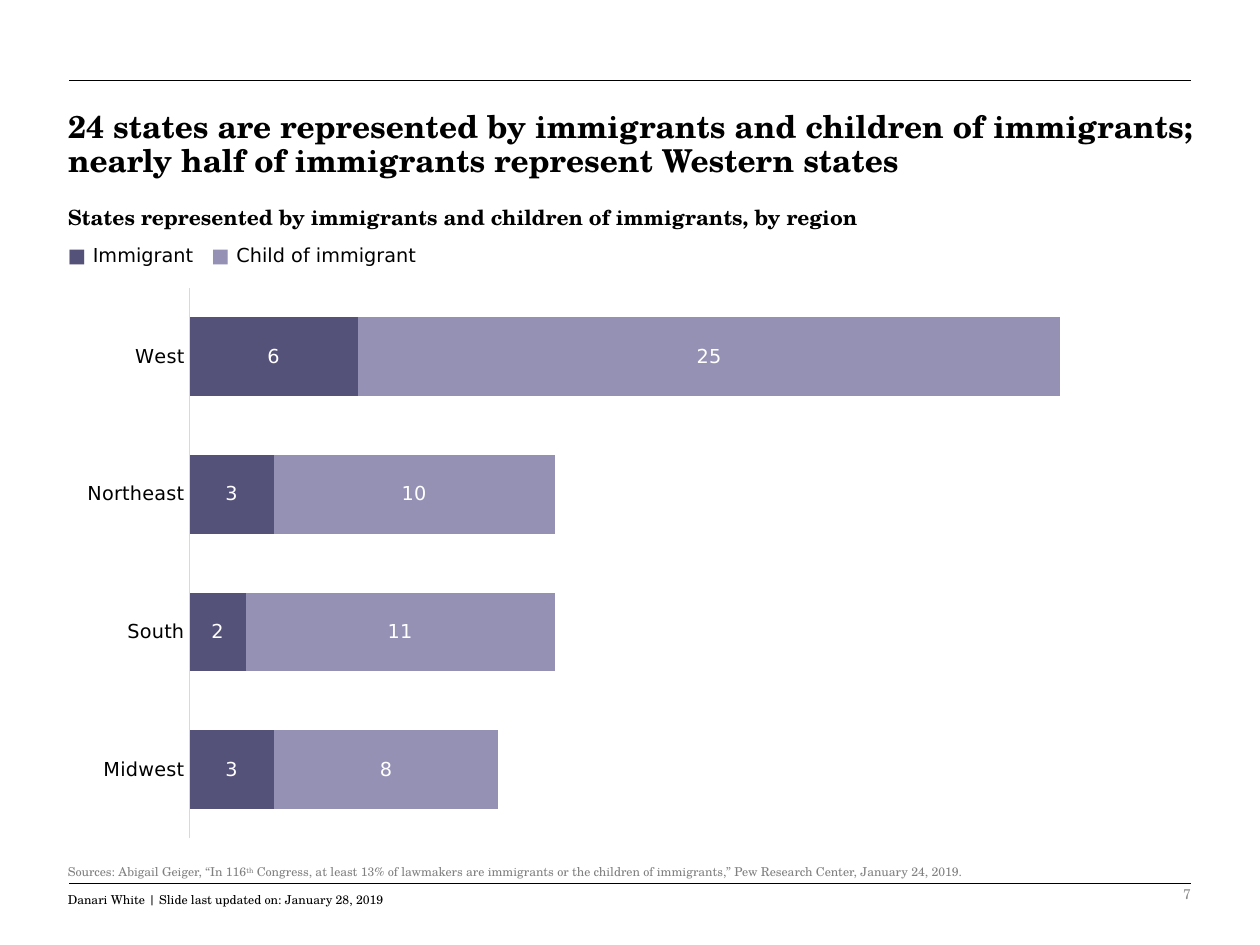
from lxml import etree
from pptx import Presentation
from pptx import util as u
from pptx.chart import data as chart_data
from pptx.dml import color
from pptx.enum import chart as ch, shapes, text
from pptx.oxml import ns

COLUMNS, ROWS = 100, 75
SLIDE_WIDTH, SLIDE_HEIGHT = u.Inches(10), u.Inches(7.5)
SERIF, SANS = "TeX Gyre Schola", "DejaVu Sans"
BLACK, WHITE, SOURCE_GREY, NUMBER_GREY, AXIS_GREY = "000000", "FFFFFF", "808080", "8C8C8C", "D9D9D9"
LEFT, WIDTH = 4.4, 90.2
RULE_LEFT, RULE_RIGHT = 5.5, 94.5

REGIONS = ["West", "Northeast", "South", "Midwest"]
GROUPS = [
    ("Immigrant", [6, 3, 2, 3], "55527A"),
    ("Child of immigrant", [25, 10, 11, 8], "9491B5"),
]
HEADLINE = {"name": SERIF, "size": u.Pt(18), "bold": True}
SUBHEAD = {"name": SERIF, "size": u.Pt(12), "bold": True}
LABEL = {"name": SANS, "size": u.Pt(11), "bold": False}
MARKER = {**LABEL, "bold": True}
FOOTNOTE = {"name": SERIF, "size": u.Pt(7)}
PAGE_NUMBER = {"name": SERIF, "size": u.Pt(8)}


def rgb(value):
    """Return the colour for a hex string."""
    return color.RGBColor.from_string(value)


def grid(box):
    """Turn alternating columns and rows of the slide grid into lengths."""
    cells = (SLIDE_WIDTH / COLUMNS, SLIDE_HEIGHT / ROWS)
    return [u.Emu(round(n * cells[i % 2])) for i, n in enumerate(box)]


def style(font, formats, colour):
    """Apply format values and a colour to a font."""
    for attribute, value in formats.items():
        setattr(font, attribute, value)
    font.color.rgb = rgb(colour)


def add_run(paragraph, words, formats, colour):
    """Append one formatted run to a paragraph."""
    run = paragraph.add_run()
    run.text = words
    style(run.font, formats, colour)
    return run


def add_paragraph_box(slide, box, **formats):
    """Add a wrapping text box and return its first paragraph."""
    frame = slide.shapes.add_textbox(*grid(box)).text_frame
    frame.word_wrap = True
    for attribute, value in formats.items():
        setattr(frame.paragraphs[0], attribute, value)
    return frame.paragraphs[0]


def add_rule(slide, row):
    """Draw a thin rule across the slide at a grid row."""
    rule = slide.shapes.add_connector(
        shapes.MSO_CONNECTOR.STRAIGHT, *grid((RULE_LEFT, row, RULE_RIGHT, row)))
    rule.line.color.rgb = rgb(BLACK)
    rule.line.width = u.Pt(0.5)
    etree.SubElement(rule._element.spPr, ns.qn("a:effectLst"))


def add_headline(slide, box):
    """Place and format the title placeholder."""
    title = slide.shapes.title
    title.left, title.top, title.width, title.height = grid(box)
    frame = title.text_frame
    frame.word_wrap = True
    frame.auto_size = text.MSO_AUTO_SIZE.NONE
    frame.vertical_anchor = text.MSO_ANCHOR.TOP
    paragraph = frame.paragraphs[0]
    paragraph.alignment = text.PP_ALIGN.LEFT
    paragraph.line_spacing = 0.9
    add_run(paragraph, "24 states are represented by immigrants and children of immigrants; "
            "nearly half of immigrants represent Western states", HEADLINE, BLACK)


def add_legend(slide, box):
    """Name the groups beside coloured markers, parted by a tab."""
    paragraph = add_paragraph_box(slide, box)
    tabs = etree.SubElement(paragraph._p.get_or_add_pPr(), ns.qn("a:tabLst"))
    etree.SubElement(tabs, ns.qn("a:tab"), pos=str(u.Inches(1.14)), algn="l")
    for index, (group, _, colour) in enumerate(GROUPS):
        add_run(paragraph, "\t■ " if index else "■ ", MARKER, colour)
        add_run(paragraph, group, LABEL, BLACK)


def fix_plot_area(chart, **shares):
    """Pin the inner plot area to shares of the chart."""
    plot_area = chart._chartSpace.chart.plotArea
    for old in plot_area.findall(ns.qn("c:layout")):
        plot_area.remove(old)
    layout = etree.Element(ns.qn("c:layout"))
    manual = etree.SubElement(layout, ns.qn("c:manualLayout"))
    settings = {"layoutTarget": "inner", "xMode": "edge", "yMode": "edge", **shares}
    for tag, value in settings.items():
        etree.SubElement(manual, ns.qn(f"c:{tag}"), val=str(value))
    plot_area.insert(0, layout)


def add_region_chart(slide, box):
    """Stack the groups in one bar for each region."""
    counts = chart_data.CategoryChartData()
    counts.categories = REGIONS
    for group, values, _ in GROUPS:
        counts.add_series(group, values)
    chart = slide.shapes.add_chart(ch.XL_CHART_TYPE.BAR_STACKED, *grid(box), counts).chart
    chart.has_legend = chart.has_title = False
    style(chart.font, LABEL, WHITE)

    regions = chart.category_axis
    regions.reverse_order = True
    regions.major_tick_mark = regions.minor_tick_mark = ch.XL_TICK_MARK.NONE
    regions.format.line.color.rgb = rgb(AXIS_GREY)
    regions.format.line.width = u.Pt(0.75)
    style(regions.tick_labels.font, LABEL, BLACK)

    scale = chart.value_axis
    scale.minimum_scale, scale.maximum_scale = 0, 35
    scale.has_major_gridlines = scale.visible = False

    bars = chart.plots[0]
    bars.gap_width, bars.overlap, bars.vary_by_categories = 75, 100, False
    for series, (_, _, colour) in zip(bars.series, GROUPS):
        series.format.fill.solid()
        series.format.fill.fore_color.rgb = rgb(colour)
        series.data_labels.show_value = True
        style(series.data_labels.font, LABEL, WHITE)
    fix_plot_area(chart, x=0.118, y=0, w=0.865, h=1)


def add_sources(slide, box):
    """Cite the source, with a raised ordinal."""
    paragraph = add_paragraph_box(slide, box, line_spacing=1.1)
    add_run(paragraph, "Sources: Abigail Geiger, “In 116", FOOTNOTE, SOURCE_GREY)
    ordinal = add_run(paragraph, "th", FOOTNOTE, SOURCE_GREY)
    ordinal._r.get_or_add_rPr().set("baseline", "30000")
    add_run(paragraph, " Congress, at least 13% of lawmakers are immigrants or the children of "
            "immigrants,” Pew Research Center, January 24, 2019.", FOOTNOTE, SOURCE_GREY)


def add_footer(slide, credit_box, number_box):
    """Place the author line and the page number."""
    credit = add_paragraph_box(slide, credit_box, line_spacing=1.1)
    add_run(credit, "Danari White | Slide last updated on: January 28, 2019", FOOTNOTE, BLACK)
    number = add_paragraph_box(slide, number_box, alignment=text.PP_ALIGN.RIGHT)
    add_run(number, "7", PAGE_NUMBER, NUMBER_GREY)


def main():
    """Build and save the slide."""
    deck = Presentation()
    deck.slide_width, deck.slide_height = SLIDE_WIDTH, SLIDE_HEIGHT
    slide = deck.slides.add_slide(deck.slide_layouts[5])
    for row in (6.4, 70.1):
        add_rule(slide, row)
    add_headline(slide, (LEFT, 8.3, 92, 7))
    subhead = add_paragraph_box(slide, (LEFT, 15.7, 75.5, 2.8))
    add_run(subhead, "States represented by immigrants and children of immigrants, by region",
            SUBHEAD, BLACK)
    add_legend(slide, (LEFT, 18.8, 36.3, 3))
    add_region_chart(slide, (LEFT, 22.8, WIDTH, 43.8))
    add_sources(slide, (LEFT, 68, WIDTH, 2.1))
    add_footer(slide, (LEFT, 70.2, 33.3, 3.7), (70.6, 69.8, 24.9, 2.5))
    deck.save("out.pptx")


if __name__ == "__main__":
    main()
